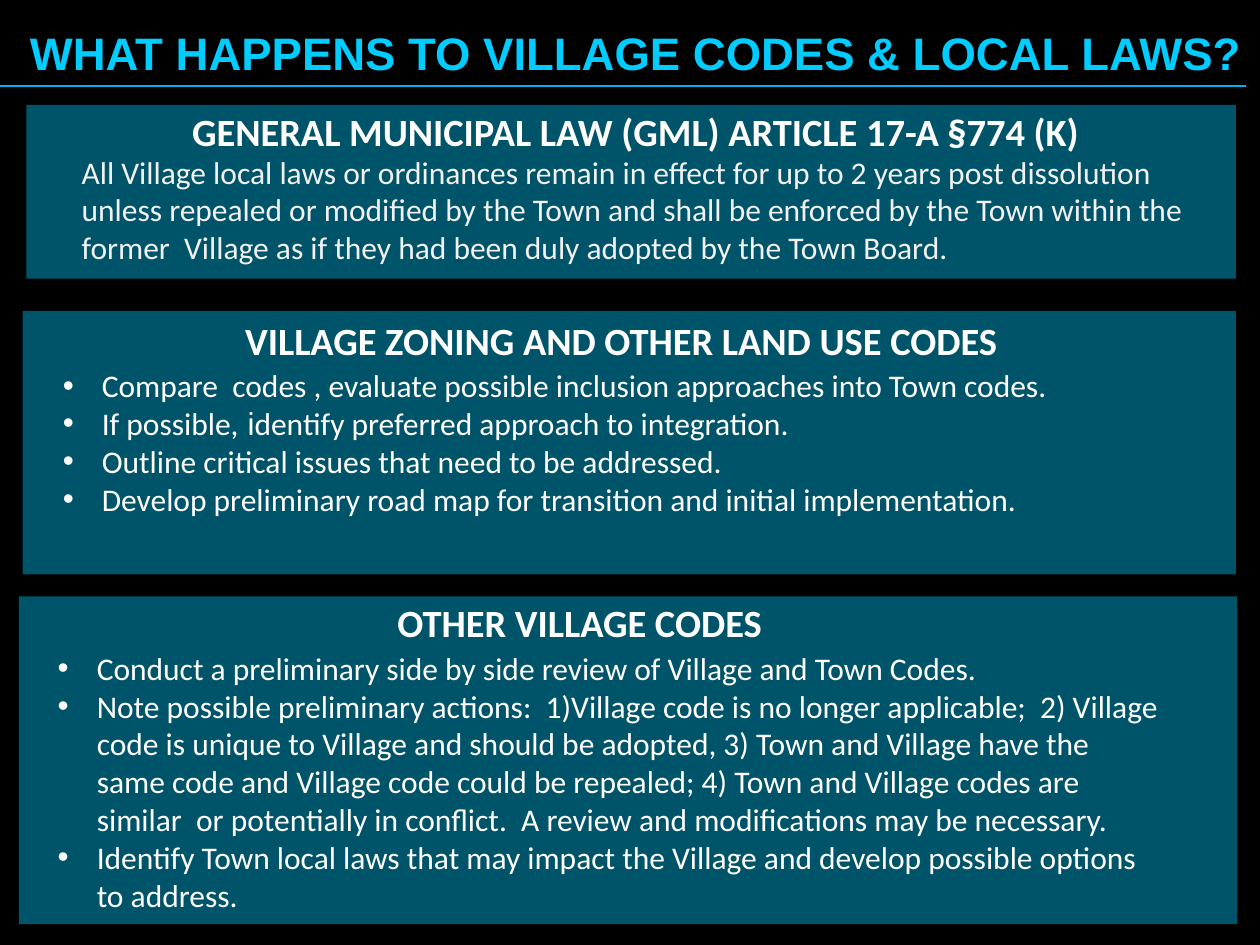
from lxml import etree
from pptx import Presentation
from pptx import util as u
from pptx.dml.color import RGBColor
from pptx.enum import shapes, text
from pptx.oxml.ns import qn

WIDTH, HEIGHT = u.Inches(10), u.Inches(7.5)
BLACK, TEAL, CYAN, BLUE = "000000", "005469", "00CCFF", "00B0F0"
WHITE, PALE = "FFFFFF", "F2F2F2"
INDENT = u.Inches(0.31)

TITLE = "WHAT HAPPENS TO VILLAGE CODES & LOCAL LAWS?"
TITLE_BOX = (0.5, 2, 100, 7.2)
RULE = (-1.1, 98.9, 9.1)

# Boxes are left, top, width, height in percent of the slide.
SECTIONS = [
    {
        "panel": (2.1, 11.1, 96, 18.4),
        "heading_box": (5.5, 10.8, 89.9, 6.3),
        "body_box": (5.5, 15.5, 90.7, 17.5),
        "heading": "GENERAL MUNICIPAL LAW (GML) ARTICLE 17-A §774 (K)",
        "color": PALE,
        "bullets": False,
        "body": [
            "All Village local laws or ordinances remain in effect for up to 2 years post dissolution "
            "unless repealed or modified by the Town and shall be enforced by the Town within the "
            "former  Village as if they had been duly adopted by the Town Board.",
        ],
    },
    {
        "panel": (1.8, 32.9, 96.3, 27.9),
        "heading_box": (4.7, 32.9, 89.9, 6.3),
        "body_box": (4, 38.1, 92, 21.6),
        "heading": "VILLAGE ZONING AND OTHER LAND USE CODES ",
        "color": WHITE,
        "bullets": True,
        "body": [
            "Compare  codes , evaluate possible inclusion approaches into Town codes.",
            [("If possible,", "Calibri"), (" i", "Arial"),
             ("dentify preferred approach to integration.", "Calibri")],
            "Outline critical issues that need to be addressed.",
            "Develop preliminary road map for transition and initial implementation.",
        ],
    },
    {
        "panel": (1.5, 63.1, 96.7, 34.7),
        "heading_box": (1.4, 62.7, 89.9, 6.3),
        "body_box": (3.6, 68, 89.8, 29.6),
        "heading": "OTHER VILLAGE CODES ",
        "color": WHITE,
        "bullets": True,
        "body": [
            "Conduct a preliminary side by side review of Village and Town Codes.",
            "Note possible preliminary actions:  1)Village code is no longer applicable;  2) Village "
            "code is unique to Village and should be adopted, 3) Town and Village have the same code "
            "and Village code could be repealed; 4) Town and Village codes are similar  or potentially "
            "in conflict.  A review and modifications may be necessary.",
            "Identify Town local laws that may impact the Village and develop possible options to address.",
        ],
    },
]


def rgb(color):
    return RGBColor.from_string(color)


def across(percent):
    return round(WIDTH * percent / 100)


def down(percent):
    return round(HEIGHT * percent / 100)


def place(box):
    left, top, width, height = box
    return across(left), down(top), across(width), down(height)


def add_bullet(paragraph):
    properties = paragraph._p.get_or_add_pPr()
    properties.set("marL", str(INDENT))
    properties.set("indent", str(-INDENT))
    etree.SubElement(properties, qn("a:buFont"), typeface="Arial")
    etree.SubElement(properties, qn("a:buChar"), char="•")


def add_text(slide, box, paragraphs, size, color, font="Calibri", bold=False,
             centered=False, bullets=False):
    frame = slide.shapes.add_textbox(*place(box)).text_frame
    frame.word_wrap = True
    for index, content in enumerate(paragraphs):
        paragraph = frame.add_paragraph() if index else frame.paragraphs[0]
        paragraph.alignment = text.PP_ALIGN.CENTER if centered else text.PP_ALIGN.LEFT
        if bullets:
            add_bullet(paragraph)
        pieces = [(content, font)] if isinstance(content, str) else content
        for words, typeface in pieces:
            run = paragraph.add_run()
            run.text = words
            run.font.name = typeface
            run.font.size = u.Pt(size)
            run.font.bold = bold
            run.font.color.rgb = rgb(color)


def add_rule(slide):
    start, end, height = RULE
    rule = slide.shapes.add_connector(
        shapes.MSO_CONNECTOR.STRAIGHT, across(start), down(height), across(end), down(height))
    rule.line.color.rgb = rgb(BLUE)
    rule.line.width = u.Pt(1.5)
    etree.SubElement(rule._element.spPr, qn("a:effectLst"))


def add_section(slide, section):
    panel = slide.shapes.add_shape(shapes.MSO_SHAPE.RECTANGLE, *place(section["panel"]))
    panel.shadow.inherit = False
    panel.fill.solid()
    panel.fill.fore_color.rgb = rgb(TEAL)
    panel.line.fill.background()
    add_text(slide, section["heading_box"], [section["heading"]], 22, WHITE,
             bold=True, centered=True)
    add_text(slide, section["body_box"], section["body"], 18, section["color"],
             bullets=section["bullets"])


def main():
    presentation = Presentation()
    presentation.slide_width, presentation.slide_height = WIDTH, HEIGHT
    slide = presentation.slides.add_slide(presentation.slide_layouts[6])
    slide.background.fill.solid()
    slide.background.fill.fore_color.rgb = rgb(BLACK)
    add_text(slide, TITLE_BOX, [TITLE], 26, CYAN, font="Arial", bold=True, centered=True)
    add_rule(slide)
    for section in SECTIONS:
        add_section(slide, section)
    presentation.save("out.pptx")


if __name__ == "__main__":
    main()
